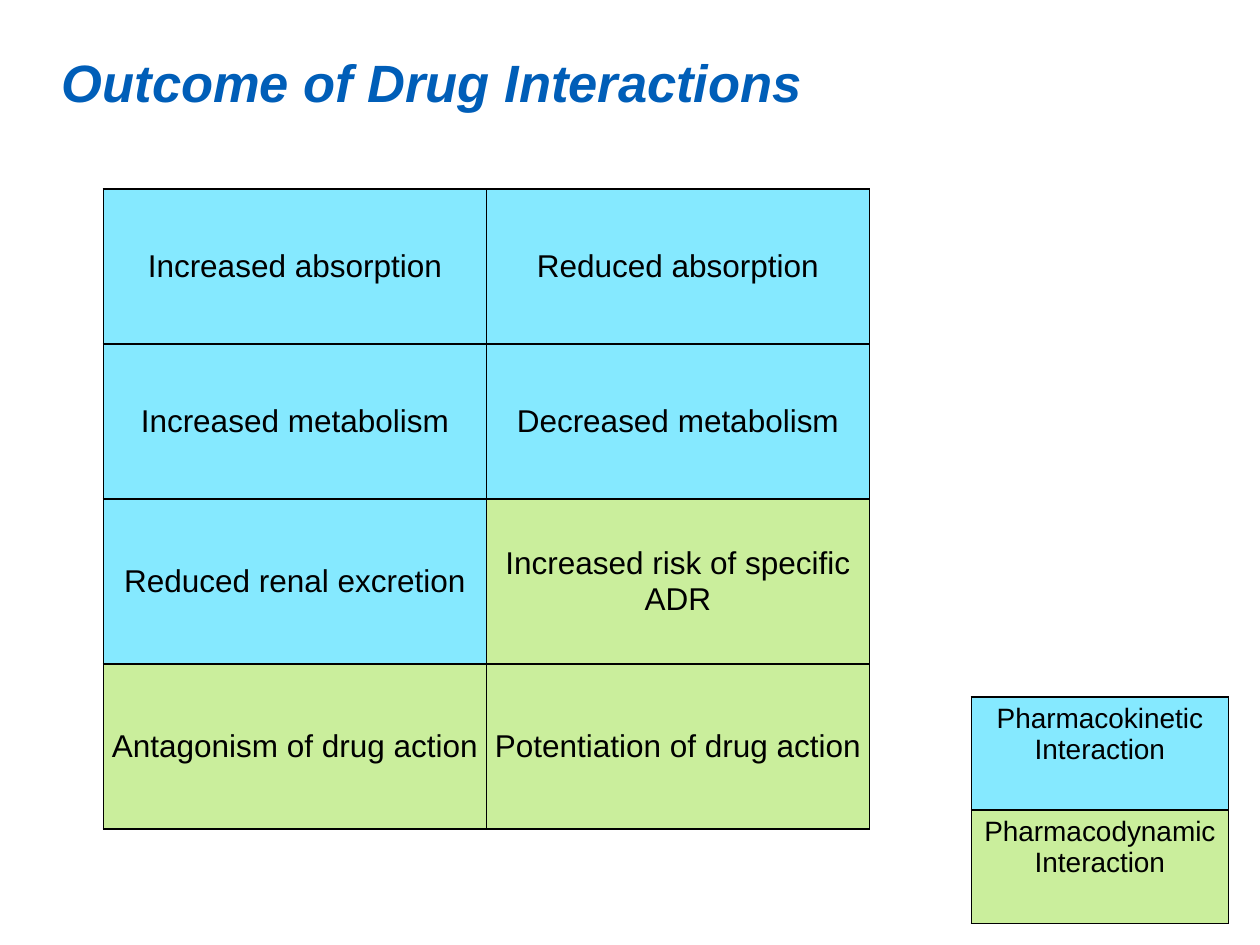
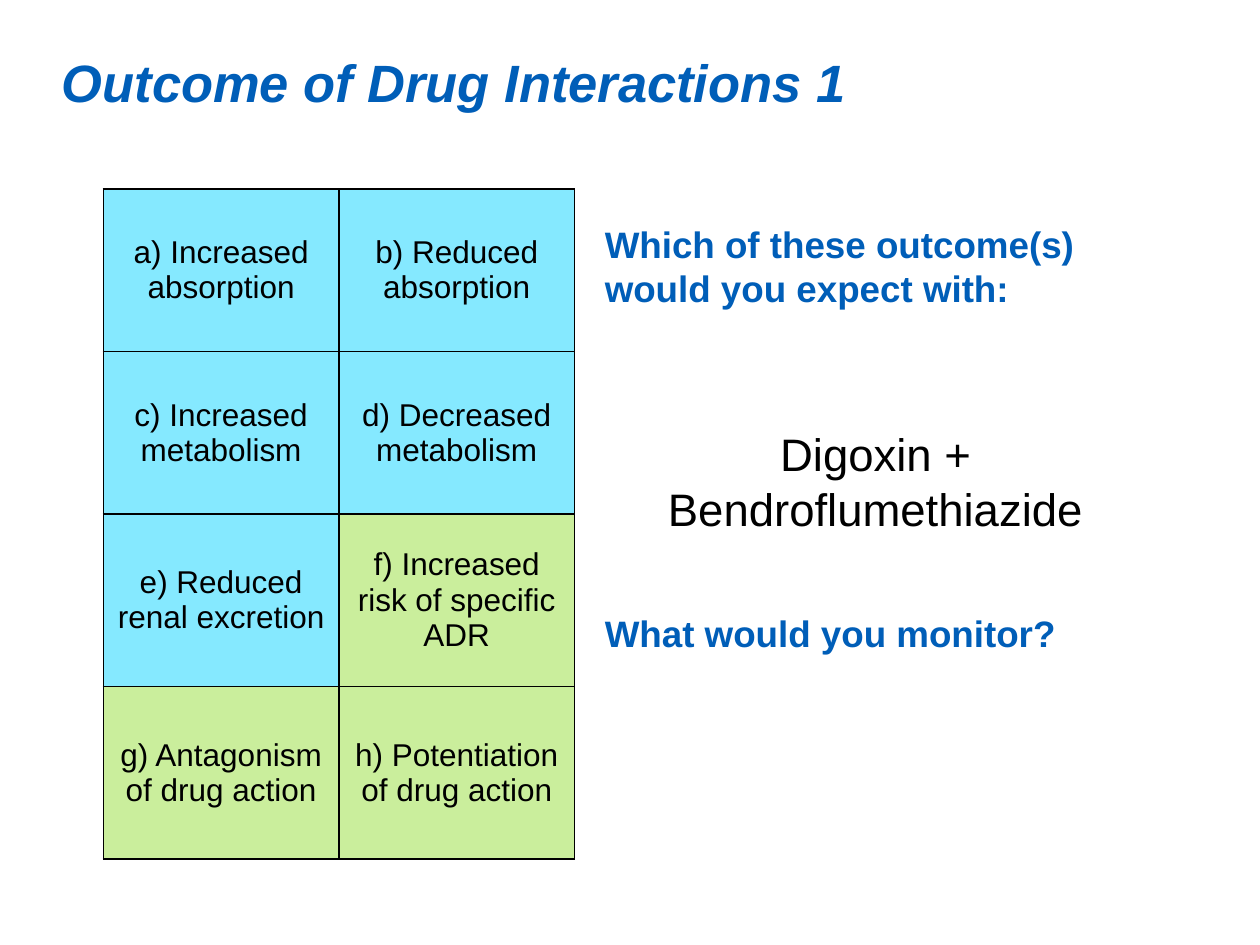
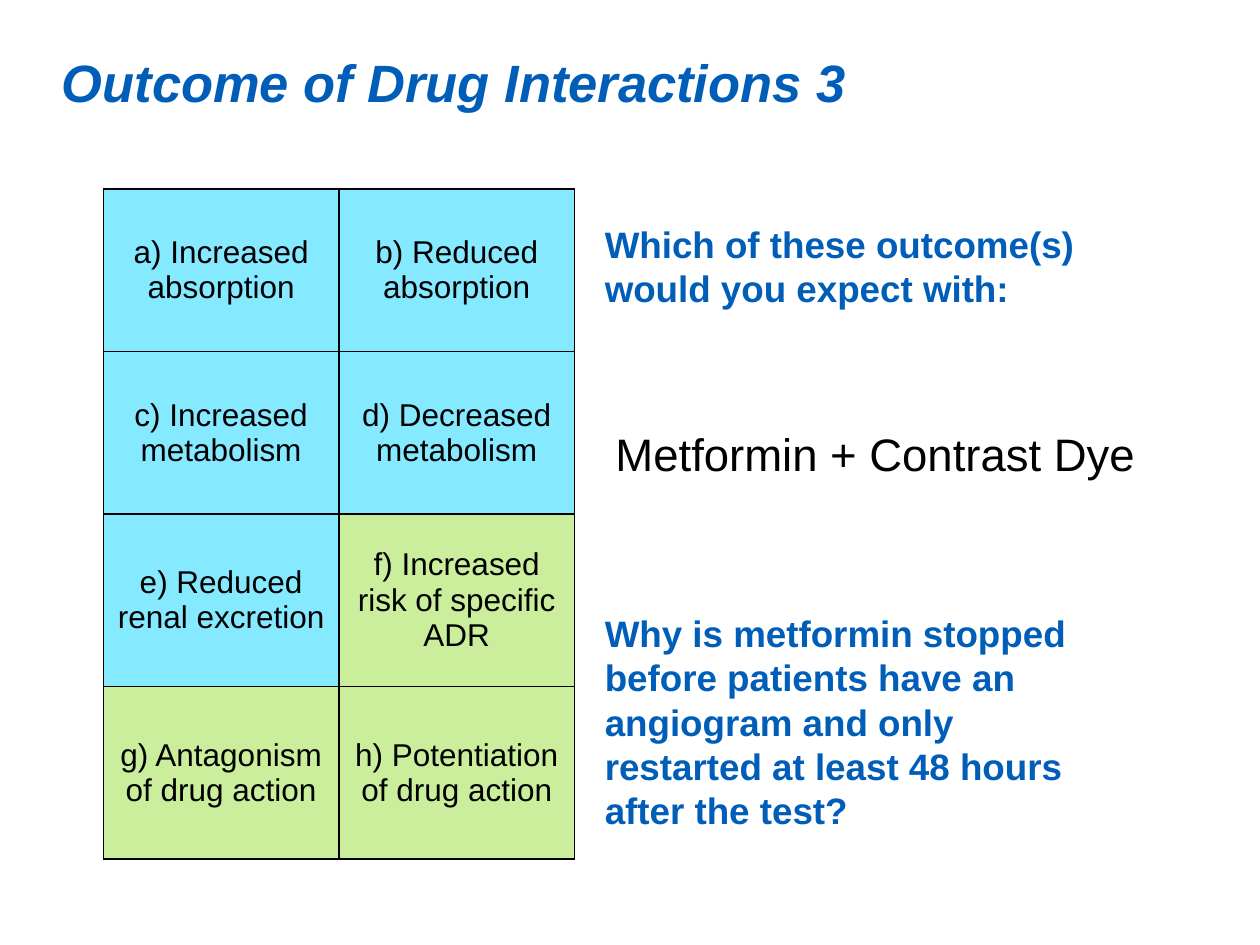
from dataclasses import dataclass

from lxml import etree
from pptx import Presentation
from pptx.dml.color import RGBColor
from pptx.enum import text
from pptx.oxml.ns import qn
from pptx.util import Inches, Pt

# Shared look
FONT = "Arial"
BLUE, BLACK = "005EB8", "000000"
KINETIC, DYNAMIC = "85E9FF", "CAEE9C"
LEFT, CENTER = text.PP_ALIGN.LEFT, text.PP_ALIGN.CENTER
LEADING = 1.2


@dataclass(frozen=True)
class Style:
    size: int
    color: str = BLACK
    bold: bool = False
    italic: bool = False
    align: text.PP_ALIGN = CENTER


TITLE = Style(30, BLUE, True, True, LEFT)
QUESTION = Style(21, BLUE, True, align=LEFT)
DRUGS = Style(26)
OUTCOME = Style(18)
LEGEND = Style(16)


@dataclass(frozen=True)
class Box:
    left: float
    top: float
    width: float
    height: float

    def emu(self) -> tuple:
        return tuple(Inches(v) for v in (self.left, self.top, self.width, self.height))


@dataclass(frozen=True)
class Grid:
    left: float
    top: float
    col_width: float
    row_heights: tuple
    style: Style
    tight: bool = False  # narrow side margins, text in the middle


@dataclass(frozen=True)
class Cell:
    label: str
    fill: str


@dataclass(frozen=True)
class Quiz:
    number: int
    drugs: str
    drugs_height: float
    follow_up: str
    follow_up_height: float


HEADING = "Outcome of Drug Interactions"
OUTCOMES = [
    Cell("Increased absorption", KINETIC),
    Cell("Reduced absorption", KINETIC),
    Cell("Increased metabolism", KINETIC),
    Cell("Decreased metabolism", KINETIC),
    Cell("Reduced renal excretion", KINETIC),
    Cell("Increased risk of specific ADR", DYNAMIC),
    Cell("Antagonism of drug action", DYNAMIC),
    Cell("Potentiation of drug action", DYNAMIC),
]
LETTERED = [Cell(f"{letter}) {c.label}", c.fill) for letter, c in zip("abcdefgh", OUTCOMES)]
KEY = [
    Cell("Pharmacokinetic Interaction", KINETIC),
    Cell("Pharmacodynamic\nInteraction", DYNAMIC),
]
QUIZZES = [
    Quiz(1, "Digoxin + Bendroflumethiazide", 0.88, "What would you monitor?", 0.35),
    Quiz(3, "Metformin + Contrast Dye", 0.44,
         "Why is metformin stopped before patients have an angiogram and only "
         "restarted at least 48 hours after the test?", 2.12),
]

WIDE_GRID = Grid(0.82, 1.5, 3.04, (1.23, 1.23, 1.31, 1.31), OUTCOME, True)
NARROW_GRID = Grid(0.82, 1.5, 1.87, (1.29, 1.29, 1.37, 1.37), OUTCOME, True)
KEY_GRID = Grid(7.71, 5.53, 2.04, (0.9, 0.9), LEGEND)


def rgb(color: str) -> RGBColor:
    return RGBColor.from_string(color)


def write(tf, content: str, style: Style) -> None:
    for i, line in enumerate(content.split("\n")):
        p = tf.paragraphs[0] if i == 0 else tf.add_paragraph()
        p.alignment = style.align
        r = p.add_run()
        r.text = line
        r.font.name, r.font.size = FONT, Pt(style.size)
        r.font.bold, r.font.italic = style.bold, style.italic
        r.font.color.rgb = rgb(style.color)


def fill_box(sp, content: str, style: Style) -> None:
    """Put text in a margin-free frame with even leading."""
    tf = sp.text_frame
    tf.margin_left = tf.margin_right = tf.margin_top = tf.margin_bottom = 0
    tf.word_wrap = True
    tf.auto_size = text.MSO_AUTO_SIZE.SHAPE_TO_FIT_TEXT
    tf.vertical_anchor = text.MSO_ANCHOR.TOP
    write(tf, content, style)
    for p in tf.paragraphs:
        p.line_spacing = Pt(style.size * LEADING)


def add_text(s, box: Box, content: str, style: Style) -> None:
    fill_box(s.shapes.add_textbox(*box.emu()), content, style)


def add_titled_slide(prs, title: str):
    s = prs.slides.add_slide(prs.slide_layouts[5])
    sp = s.shapes.title
    sp.left, sp.top, sp.width, sp.height = Box(0.49, 0.4, 8.61, 0.5).emu()
    fill_box(sp, title, TITLE)
    return s


def add_borders(cell) -> None:
    """Rule all four sides in black, 1 pt; lines precede the fill."""
    tc_pr = cell._tc.get_or_add_tcPr()
    for i, side in enumerate(("lnL", "lnR", "lnT", "lnB")):
        ln = etree.Element(qn(f"a:{side}"), w=str(Pt(1)))
        solid = etree.SubElement(ln, qn("a:solidFill"))
        etree.SubElement(solid, qn("a:srgbClr"), val=BLACK)
        tc_pr.insert(i, ln)


def add_grid(s, grid: Grid, cells: list) -> None:
    rows = len(grid.row_heights)
    cols = len(cells) // rows
    box = Box(grid.left, grid.top, grid.col_width * cols, sum(grid.row_heights))
    table = s.shapes.add_table(rows, cols, *box.emu()).table
    table.first_row = table.horz_banding = False
    for col in table.columns:
        col.width = Inches(grid.col_width)
    for row, height in zip(table.rows, grid.row_heights):
        row.height = Inches(height)
    for cell, item in zip(table.iter_cells(), cells):
        if grid.tight:
            cell.margin_left = cell.margin_right = Inches(0.06)
            cell.margin_top = cell.margin_bottom = 0
            cell.vertical_anchor = text.MSO_ANCHOR.MIDDLE
        cell.fill.solid()
        cell.fill.fore_color.rgb = rgb(item.fill)
        add_borders(cell)
        write(cell.text_frame, item.label, grid.style)


def add_quiz(prs, quiz: Quiz) -> None:
    s = add_titled_slide(prs, f"{HEADING} {quiz.number}")
    add_grid(s, NARROW_GRID, LETTERED)
    add_text(s, Box(4.8, 1.76, 4, 0.71),
             "Which of these outcome(s) would you expect with:", QUESTION)
    add_text(s, Box(4.8, 3.38, 4.3, quiz.drugs_height), quiz.drugs, DRUGS)
    add_text(s, Box(4.8, 4.85, 4, quiz.follow_up_height), quiz.follow_up, QUESTION)


def main() -> None:
    prs = Presentation()
    prs.slide_width, prs.slide_height = Inches(10), Inches(7.5)

    # Overview with colour key
    s = add_titled_slide(prs, HEADING)
    add_grid(s, WIDE_GRID, OUTCOMES)
    add_grid(s, KEY_GRID, KEY)

    # Quiz slides
    for quiz in QUIZZES:
        add_quiz(prs, quiz)

    prs.save("out.pptx")


if __name__ == "__main__":
    main()
